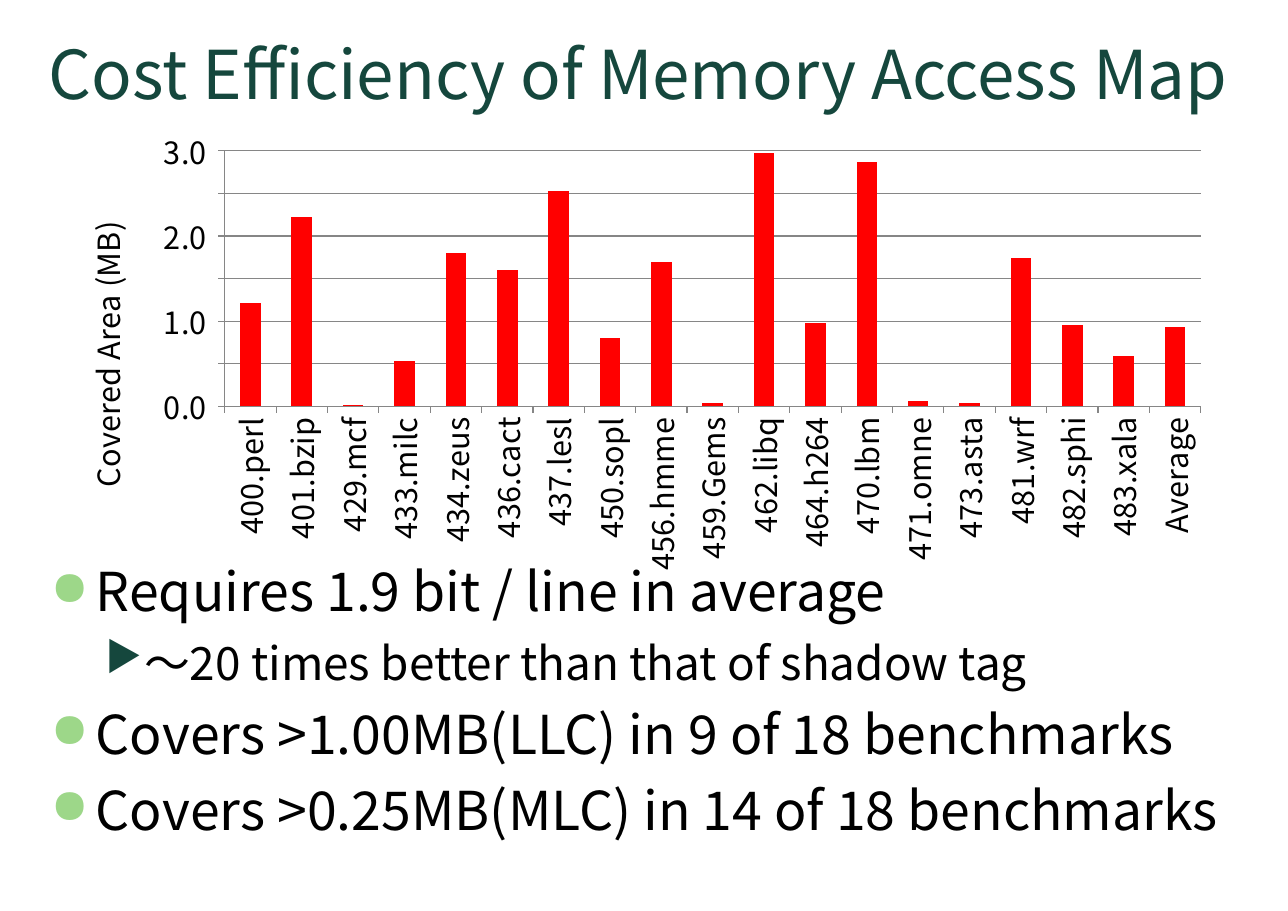
import dataclasses
import typing

import lxml.etree
import pptx
import pptx.chart.data
import pptx.dml.color
import pptx.enum.chart
import pptx.enum.text
import pptx.oxml
import pptx.oxml.ns
import pptx.util

Inches = pptx.util.Inches
Pt = pptx.util.Pt
qn = pptx.oxml.ns.qn


@dataclasses.dataclass(frozen=True)
class Theme:
    face: str = "Noto Sans CJK JP"
    dark: str = "15473D"
    ink: str = "000000"
    leaf: str = "9DD789"
    bar: str = "FF0000"
    grid: str = "868686"
    head: float = 44
    main: float = 35
    sub: float = 30
    axis: float = 20


@dataclasses.dataclass(frozen=True)
class Style:
    mark: str
    tint: str
    size: float
    left: float
    hang: float


class Point(typing.NamedTuple):
    text: str
    level: int = 0


class Box(typing.NamedTuple):
    left: float
    top: float
    width: float
    height: float


THEME = Theme()
STYLES = (
    Style("●", THEME.leaf, THEME.main, 0.43, 0.41),
    Style("▶", THEME.dark, THEME.sub, 0.86, 0.34),
)
POINTS = (
    Point("Requires 1.9 bit / line in average"),
    Point("～20 times better than that of shadow tag", 1),
    Point("Covers >1.00MB(LLC) in 9 of 18 benchmarks"),
    Point("Covers >0.25MB(MLC) in 14 of 18 benchmarks"),
)
CHART = Box(0.53, 1.13, 10.58, 4.18)
AREAS = {
    "400.perl": 1.21, "401.bzip": 2.22, "429.mcf": 0.02, "433.milc": 0.53,
    "434.zeus": 1.8, "436.cact": 1.6, "437.lesl": 2.53, "450.sopl": 0.8,
    "456.hmme": 1.69, "459.Gems": 0.04, "462.libq": 2.98, "464.h264": 0.98,
    "470.lbm": 2.87, "471.omne": 0.06, "473.asta": 0.04, "481.wrf": 1.74,
    "482.sphi": 0.96, "483.xala": 0.59, "Average": 0.93,
}


def paint(font, size: float, tint: str) -> None:
    font.name = THEME.face
    font.size = Pt(size)
    font.bold = False
    font.color.rgb = pptx.dml.color.RGBColor.from_string(tint)


def paint_runs(para, size: float, tint: str) -> None:
    for run in para.runs:
        paint(run.font, size, tint)
        east = lxml.etree.SubElement(run.font._element, qn("a:ea"))
        east.set("typeface", THEME.face)


def add_box(slide, box: Box):
    frame = slide.shapes.add_textbox(*map(Inches, box)).text_frame
    frame.word_wrap = True
    frame.margin_left = frame.margin_right = Inches(0.11)
    frame.margin_top = frame.margin_bottom = Inches(0.05)
    return frame


def add_mark(para, style: Style) -> None:
    props = para._p.get_or_add_pPr()
    props.set("marL", str(Inches(style.left)))
    props.set("indent", str(-Inches(style.hang)))
    tint = lxml.etree.SubElement(props, qn("a:buClr"))
    lxml.etree.SubElement(tint, qn("a:srgbClr")).set("val", style.tint)
    lxml.etree.SubElement(props, qn("a:buSzPct")).set("val", "90000")
    lxml.etree.SubElement(props, qn("a:buChar")).set("char", style.mark)


def add_title(slide) -> None:
    frame = add_box(slide, Box(0.33, 0.22, 10.98, 0.87))
    frame.vertical_anchor = pptx.enum.text.MSO_ANCHOR.MIDDLE
    frame.text = "Cost Efficiency of Memory Access Map"
    paint_runs(frame.paragraphs[0], THEME.head, THEME.dark)


def add_points(slide) -> None:
    frame = add_box(slide, Box(0.33, 5.02, 11.36, 2.81))
    frame.text = "\n".join(point.text for point in POINTS)
    for row, (para, point) in enumerate(zip(frame.paragraphs, POINTS)):
        style = STYLES[point.level]
        para.level = point.level
        add_mark(para, style)
        para.space_before = Pt(7.5 if row else 0)
        paint_runs(para, style.size, THEME.ink)


def place(owner, slot: int, sizes: dict[str, float], inner: bool = False) -> None:
    for old in owner.findall(qn("c:layout")):
        owner.remove(old)
    layout = pptx.oxml.parse_xml(
        '<c:layout xmlns:c="http://schemas.openxmlformats.org/drawingml/2006/chart"/>')
    hand = lxml.etree.SubElement(layout, qn("c:manualLayout"))
    if inner:
        lxml.etree.SubElement(hand, qn("c:layoutTarget")).set("val", "inner")
    for key in ("xMode", "yMode"):
        lxml.etree.SubElement(hand, qn(f"c:{key}")).set("val", "edge")
    for key, size in sizes.items():
        whole = CHART.width if key in "xw" else CHART.height
        lxml.etree.SubElement(hand, qn(f"c:{key}")).set("val", str(size / whole))
    owner.insert(slot, layout)


def draw_line(line) -> None:
    line.width = Pt(0.75)
    line.color.rgb = pptx.dml.color.RGBColor.from_string(THEME.grid)


def set_axis(axis) -> None:
    axis.major_tick_mark = pptx.enum.chart.XL_TICK_MARK.OUTSIDE
    axis.minor_tick_mark = pptx.enum.chart.XL_TICK_MARK.NONE
    paint(axis.tick_labels.font, THEME.axis, THEME.ink)
    draw_line(axis.format.line)


def add_chart(slide) -> None:
    data = pptx.chart.data.CategoryChartData()
    data.categories = list(AREAS)
    data.add_series("Series 1", list(AREAS.values()))
    kind = pptx.enum.chart.XL_CHART_TYPE.COLUMN_CLUSTERED
    chart = slide.shapes.add_chart(kind, *map(Inches, CHART), data).chart
    chart.has_legend = chart.has_title = False
    paint(chart.font, 10, THEME.ink)
    plot = chart.plots[0]
    plot.gap_width = 150
    plot.vary_by_categories = False
    fill = plot.series[0].format.fill
    fill.solid()
    fill.fore_color.rgb = pptx.dml.color.RGBColor.from_string(THEME.bar)

    base, side = chart.category_axis, chart.value_axis
    for axis in (base, side):
        set_axis(axis)
    base._element.find(qn("c:txPr")).find(qn("a:bodyPr")).set("rot", "-5400000")
    skip = lxml.etree.Element(qn("c:tickLblSkip"))
    skip.set("val", "2")
    base._element.find(qn("c:noMultiLvlLbl")).addprevious(skip)
    side.minimum_scale, side.maximum_scale, side.major_unit = 0, 3, 0.5
    side.has_major_gridlines = True
    draw_line(side.major_gridlines.format.line)
    side.tick_labels.number_format = r"#,##0.0_);[Red]\(#,##0.0\)"
    side.tick_labels.number_format_is_linked = False

    frame = side.axis_title.text_frame
    frame.text = "Covered Area (MB)"
    frame._txBody.find(qn("a:bodyPr")).set("rot", "-5400000")
    paint_runs(frame.paragraphs[0], THEME.axis, THEME.ink)
    place(side.axis_title._element, 1, {"x": 0.16, "y": 0.83})
    area = chart._chartSpace.chart.plotArea
    place(area, 0, {"x": 1.51, "y": 0.24, "w": 8.86, "h": 2.32}, True)


def main() -> None:
    deck = pptx.Presentation()
    deck.slide_width, deck.slide_height = Inches(11.69), Inches(8.27)
    slide = deck.slides.add_slide(deck.slide_layouts[6])
    add_title(slide)
    add_points(slide)
    add_chart(slide)
    deck.save("out.pptx")


if __name__ == "__main__":
    main()
